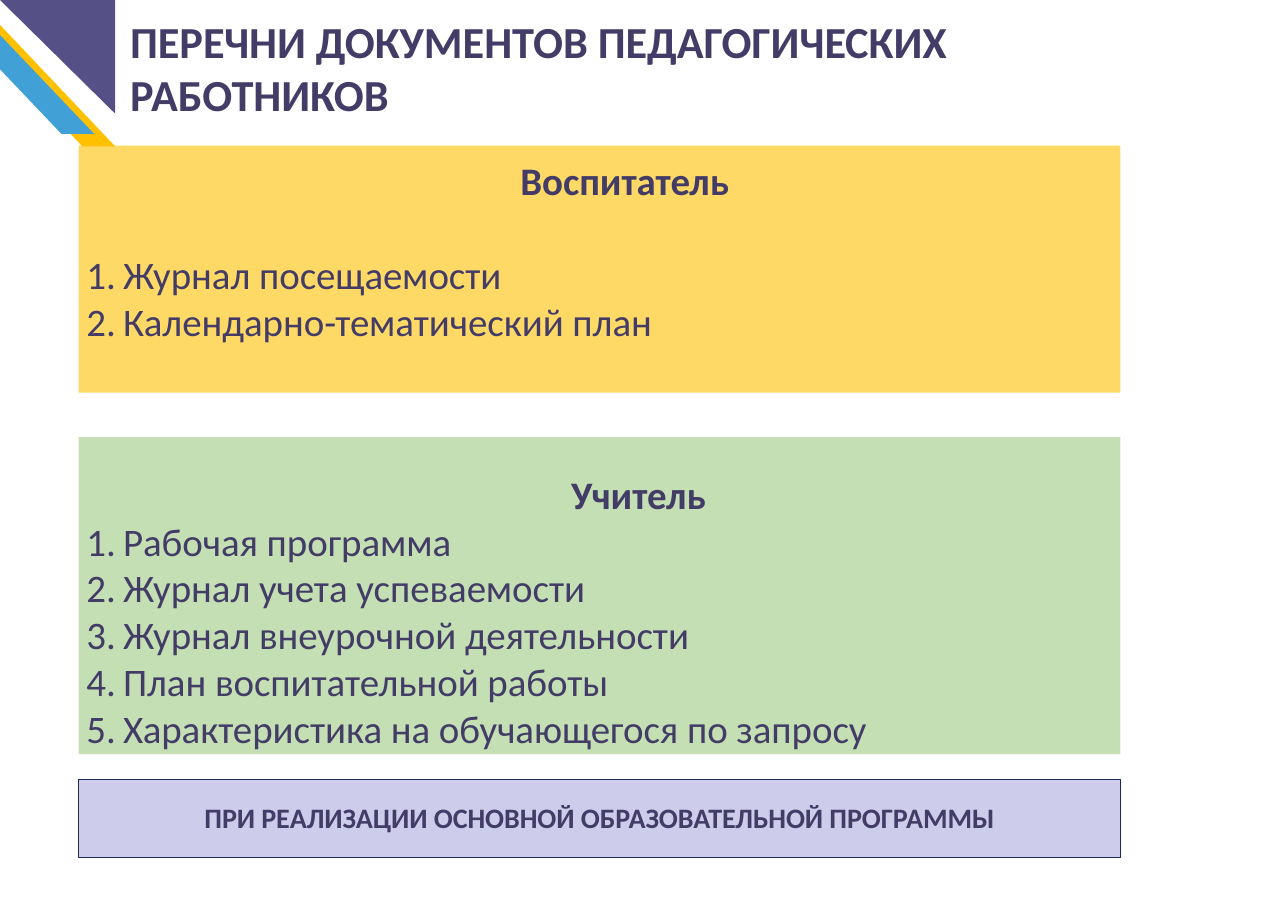
from dataclasses import dataclass

import pptx
import pptx.dml.color
import pptx.enum.text
import pptx.oxml.ns
import pptx.util
from lxml import etree
from pptx.enum.shapes import MSO_SHAPE
from pptx.util import Inches


@dataclass(frozen=True)
class Theme:
    font: str = "Calibri"
    ink: str = "423C67"
    amber: str = "FFC000"
    blue: str = "41A1D7"
    violet: str = "555086"
    yellow: str = "FFD966"
    green: str = "C5DFB4"
    lilac: str = "CDCDEB"
    border: str = "172C51"
    title_size: float = 41
    body_size: float = 36
    note_size: float = 26


THEME = Theme()
ALIGN = pptx.enum.text.PP_ALIGN
CARD_LEFT, CARD_WIDTH = 1.01, 13.38


def rgb(value):
    return pptx.dml.color.RGBColor.from_string(value)


def paint(shape, color):
    shape.fill.solid()
    shape.fill.fore_color.rgb = rgb(color)


def place(shape, box):
    shape.left, shape.top, shape.width, shape.height = map(Inches, box)


def prepare_frame(shape, top_inset):
    """Set the text at the top of the shape, without side insets or autofit."""
    frame = shape.text_frame
    frame.word_wrap = True
    frame.auto_size = pptx.enum.text.MSO_AUTO_SIZE.NONE
    frame.vertical_anchor = pptx.enum.text.MSO_ANCHOR.TOP
    frame.margin_left = frame.margin_right = frame.margin_bottom = 0
    frame.margin_top = Inches(top_inset)
    return frame


def write(para, text, *, size, bold=False, align=ALIGN.LEFT, after=0,
          margin=0, indent=0, numbered=False, tracking=-5):
    """Add formatted text; tracking is in hundredths of a point."""
    span = para.add_run()
    span.text = text
    span.font.name, span.font.size = THEME.font, pptx.util.Pt(size)
    span.font.bold, span.font.color.rgb = bold, rgb(THEME.ink)
    span._r.get_or_add_rPr().set("spc", str(tracking))
    para.alignment = align
    para.space_before = pptx.util.Pt(0)
    para.space_after = pptx.util.Pt(after)
    props = para._p.get_or_add_pPr()
    props.set("marL", str(Inches(margin)))
    props.set("indent", str(Inches(indent)))
    bullet = "a:buAutoNum" if numbered else "a:buNone"
    element = etree.SubElement(props, pptx.oxml.ns.qn(bullet))
    if numbered:
        element.set("type", "arabicPeriod")


def set_page_size(deck, width, height):
    """Set a custom slide size, dropping the template's 4:3 label."""
    deck.slide_width, deck.slide_height = width, height
    size = deck.element.find(pptx.oxml.ns.qn("p:sldSz"))
    size.attrib.pop("type", None)


def draw_corner(page, box):
    """Draw the three slanted shapes of the page corner."""
    left, top = box
    pieces = (
        (THEME.amber, [(0, 0.32), (0, 0.77), (1.06, 1.88), (1.48, 1.88)]),
        (THEME.blue, [(0, 0.45), (0, 0.89), (0.79, 1.72), (1.21, 1.72)]),
        (THEME.violet, [(1.48, 0), (0, 0), (1.48, 1.46)]),
    )
    for color, points in pieces:
        outline = [(Inches(left + x), Inches(top + y)) for x, y in points]
        builder = page.shapes.build_freeform(*outline[0], scale=1.0)
        builder.add_line_segments(outline[1:], close=True)
        piece = builder.convert_to_shape()
        piece.shadow.inherit = False
        piece.line.fill.background()
        paint(piece, color)


def fill_title(title, box, text):
    place(title, box)
    frame = prepare_frame(title, 0.02)
    write(frame.paragraphs[0], text, size=THEME.title_size, bold=True)


def fill_card(card, box, color, heading, items, *, top_inset, shift, after=0):
    """Turn a body placeholder into a coloured card with a numbered list."""
    place(card, box)
    paint(card, color)
    frame = prepare_frame(card, top_inset)
    write(frame.paragraphs[0], heading, size=THEME.body_size, bold=True,
          align=ALIGN.CENTER, margin=shift, after=after)
    for item in items:
        write(frame.add_paragraph(), item, size=THEME.body_size,
              margin=0.57, indent=-0.47, numbered=True)


def draw_note(page, box, text):
    note = page.shapes.add_shape(MSO_SHAPE.RECTANGLE, *map(Inches, box))
    note.shadow.inherit = False
    paint(note, THEME.lilac)
    note.line.color.rgb = rgb(THEME.border)
    note.line.width = pptx.util.Pt(1)
    frame = prepare_frame(note, 0.26)
    write(frame.paragraphs[0], text, size=THEME.note_size, bold=True,
          align=ALIGN.CENTER, tracking=-10)


def main():
    deck = pptx.Presentation()
    set_page_size(deck, pptx.util.Pt(1191), pptx.util.Pt(842))
    page = deck.slides.add_slide(deck.slide_layouts.get_by_name("Two Content"))
    title, educator, teacher = page.placeholders
    draw_corner(page, (0, 0))
    fill_title(title, (1.67, 0.16, 10.86, 1.4),
               "ПЕРЕЧНИ ДОКУМЕНТОВ ПЕДАГОГИЧЕСКИХ РАБОТНИКОВ")
    fill_card(educator, (CARD_LEFT, 1.87, CARD_WIDTH, 3.17), THEME.yellow,
              "Воспитатель",
              ["Журнал посещаемости", "Календарно-тематический план"],
              top_inset=0.14, shift=0.65, after=43.5)
    fill_card(teacher, (CARD_LEFT, 5.61, CARD_WIDTH, 4.07), THEME.green,
              "Учитель",
              ["Рабочая программа", "Журнал учета успеваемости",
               "Журнал внеурочной деятельности", "План воспитательной работы",
               "Характеристика на обучающегося по запросу"],
              top_inset=0.43, shift=1)
    draw_note(page, (CARD_LEFT, 10.01, CARD_WIDTH, 1),
              "ПРИ РЕАЛИЗАЦИИ ОСНОВНОЙ ОБРАЗОВАТЕЛЬНОЙ ПРОГРАММЫ")
    deck.save("out.pptx")


if __name__ == "__main__":
    main()
